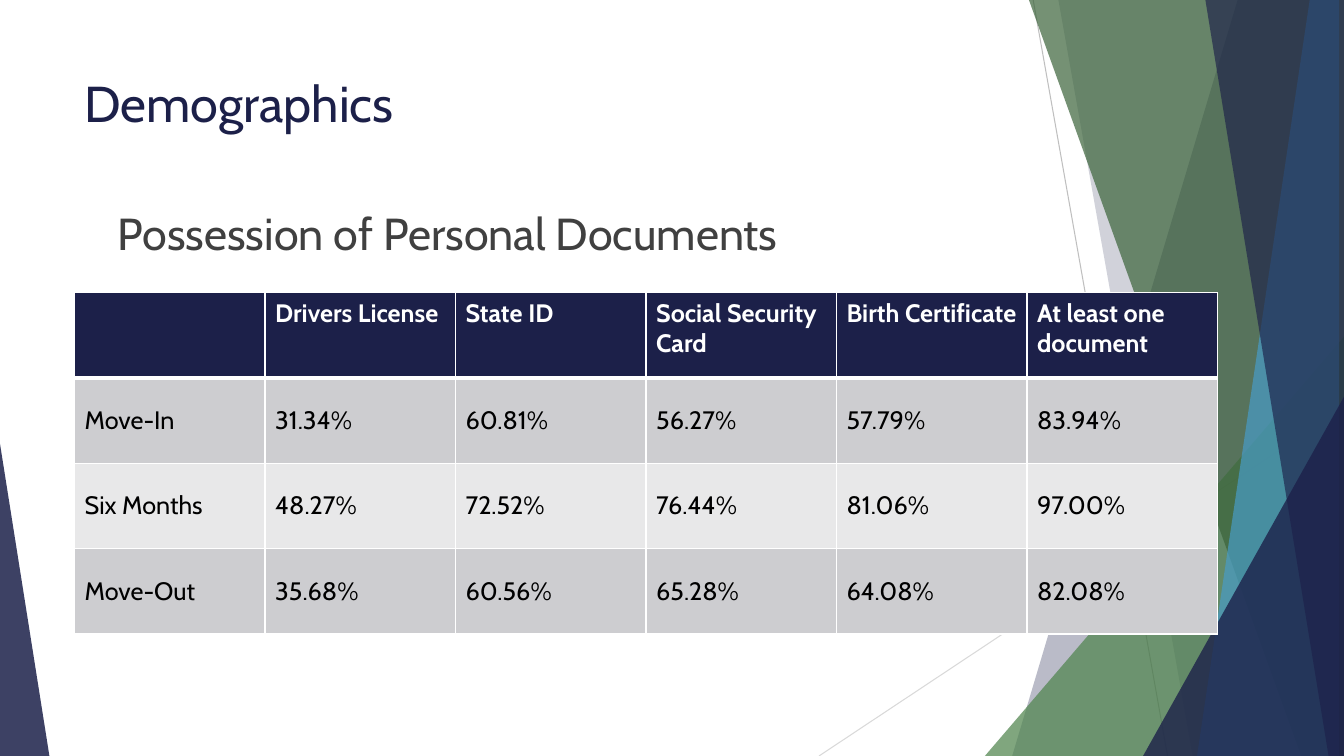
from dataclasses import dataclass

from lxml import etree
from pptx import Presentation
from pptx.dml.color import RGBColor
from pptx.enum.shapes import MSO_CONNECTOR, MSO_SHAPE
from pptx.enum.text import MSO_ANCHOR
from pptx.oxml.ns import qn
from pptx.util import Pt

STRAIGHT = MSO_CONNECTOR.STRAIGHT
TRIANGLE = MSO_SHAPE.ISOSCELES_TRIANGLE
TOP = MSO_ANCHOR.TOP
MIDDLE = MSO_ANCHOR.MIDDLE
WIDTH, HEIGHT = 960, 540


@dataclass(frozen=True)
class Theme:
    font: str = "Cabin"
    navy: str = "1C2049"
    green: str = "4F844D"
    forest: str = "3B633A"
    blue: str = "489CC7"
    gray: str = "404040"
    rule: str = "BFBFBF"
    pale: str = "D9D9D9"
    white: str = "FFFFFF"
    black: str = "000000"
    bands: tuple = ("CDCDD0", "E8E8E9")
    title: int = 36
    lead: int = 32
    body: int = 18


class Deck:
    def __init__(self, theme):
        self.theme = theme
        self.file = Presentation()
        self.file.slide_width = Pt(WIDTH)
        self.file.slide_height = Pt(HEIGHT)
        self.slide = self.file.slides.add_slide(self.file.slide_layouts[6])
        self.shapes = self.slide.shapes

    def line(self, start, end, color):
        line = self.shapes.add_connector(STRAIGHT, *map(Pt, start + end))
        line.line.color.rgb = RGBColor.from_string(color)
        line.line.width = Pt(0.75)
        etree.SubElement(line.element.spPr, qn("a:effectLst"))

    def paint(self, shape, color, alpha):
        shape.shadow.inherit = False
        shape.line.fill.background()
        shape.fill.solid()
        shape.fill.fore_color.rgb = RGBColor.from_string(color)
        tint = shape.element.spPr.find(qn("a:solidFill"))[0]
        etree.SubElement(tint, qn("a:alpha"), val=str(alpha * 1000))

    def band(self, left, right, low_left, low_right, color, alpha):
        points = [(left, 0), (right, 0), (low_right, HEIGHT), (low_left, HEIGHT)]
        points = [(Pt(x), Pt(y)) for x, y in points]
        path = self.shapes.build_freeform(*points[0])
        path.add_line_segments(points[1:], close=True)
        self.paint(path.convert_to_shape(), color, alpha)

    def wedge(self, left, top, width, tip, color, alpha):
        box = map(Pt, (left, top, width, HEIGHT - top))
        shape = self.shapes.add_shape(TRIANGLE, *box)
        shape.adjustments[0] = tip
        self.paint(shape, color, alpha)

    def style(self, para, size, color, bold=False):
        font = para.font
        font.name = self.theme.font
        font.size = Pt(size)
        font.bold = bold
        font.color.rgb = RGBColor.from_string(color)

    def text(self, box, words, size, color, before=0):
        frame = self.shapes.add_textbox(*map(Pt, box)).text_frame
        frame.word_wrap = True
        para = frame.paragraphs[0]
        para.text = words
        para.space_before = Pt(before)
        self.style(para, size, color)

    def border(self, cell, thick):
        props = cell._tc.get_or_add_tcPr()
        for side in "LRTB":
            width = Pt(3 if side == thick else 1)
            edge = etree.SubElement(props, qn(f"a:ln{side}"), w=str(width))
            fill = etree.SubElement(edge, qn("a:solidFill"))
            etree.SubElement(fill, qn("a:srgbClr"), val=self.theme.white)

    def table(self, box, rows):
        look = self.theme
        frame = self.shapes.add_table(len(rows), len(rows[0]), *map(Pt, box))
        for i, row in enumerate(rows):
            head = i == 0
            shade = look.navy if head else look.bands[(i - 1) % 2]
            ink = look.white if head else look.black
            for j, words in enumerate(row):
                cell = frame.table.cell(i, j)
                cell.text = words
                cell.vertical_anchor = TOP if head else MIDDLE
                self.style(cell.text_frame.paragraphs[0], look.body, ink, head)
                self.border(cell, {0: "B", 1: "T"}.get(i))
                cell.fill.solid()
                cell.fill.fore_color.rgb = RGBColor.from_string(shade)


ROWS = [
    ("", "Drivers License", "State ID", "Social Security Card",
     "Birth Certificate", "At least one document"),
    ("Move-In", "31.34%", "60.81%", "56.27%", "57.79%", "83.94%"),
    ("Six Months", "48.27%", "72.52%", "76.44%", "81.06%", "97.00%"),
    ("Move-Out", "35.68%", "60.56%", "65.28%", "64.08%", "82.08%"),
]


def main():
    look = Theme()
    deck = Deck(look)
    deck.line((738, 0), (834, HEIGHT), look.rule)
    deck.line((WIDTH, 291), (585, HEIGHT), look.pale)
    deck.band(884, WIDTH, 723, WIDTH, look.navy, 30)
    deck.band(756, WIDTH, 852, WIDTH, look.navy, 20)
    deck.wedge(703.5, 240.5, 256.5, 1, look.green, 72)
    deck.band(735, WIDTH, 929.5, WIDTH, look.forest, 70)
    deck.band(935.5, 956.5, 855, 956.5, look.blue, 70)
    deck.band(861, WIDTH, 949, WIDTH, look.navy, 65)
    deck.wedge(816.5, 283.5, 143.5, 1, look.navy, 80)
    deck.wedge(0, 317, 35.3, 0, look.navy, 85)
    deck.text((53.3, 48, 677, 57.6), "Demographics", look.title, look.navy)
    deck.table((53.3, 209, 816.5, 244), ROWS)
    deck.text((77, 143.3, 566, 65.5), "Possession of Personal Documents",
              look.lead, look.gray, 10)
    deck.file.save("out.pptx")


if __name__ == "__main__":
    main()
